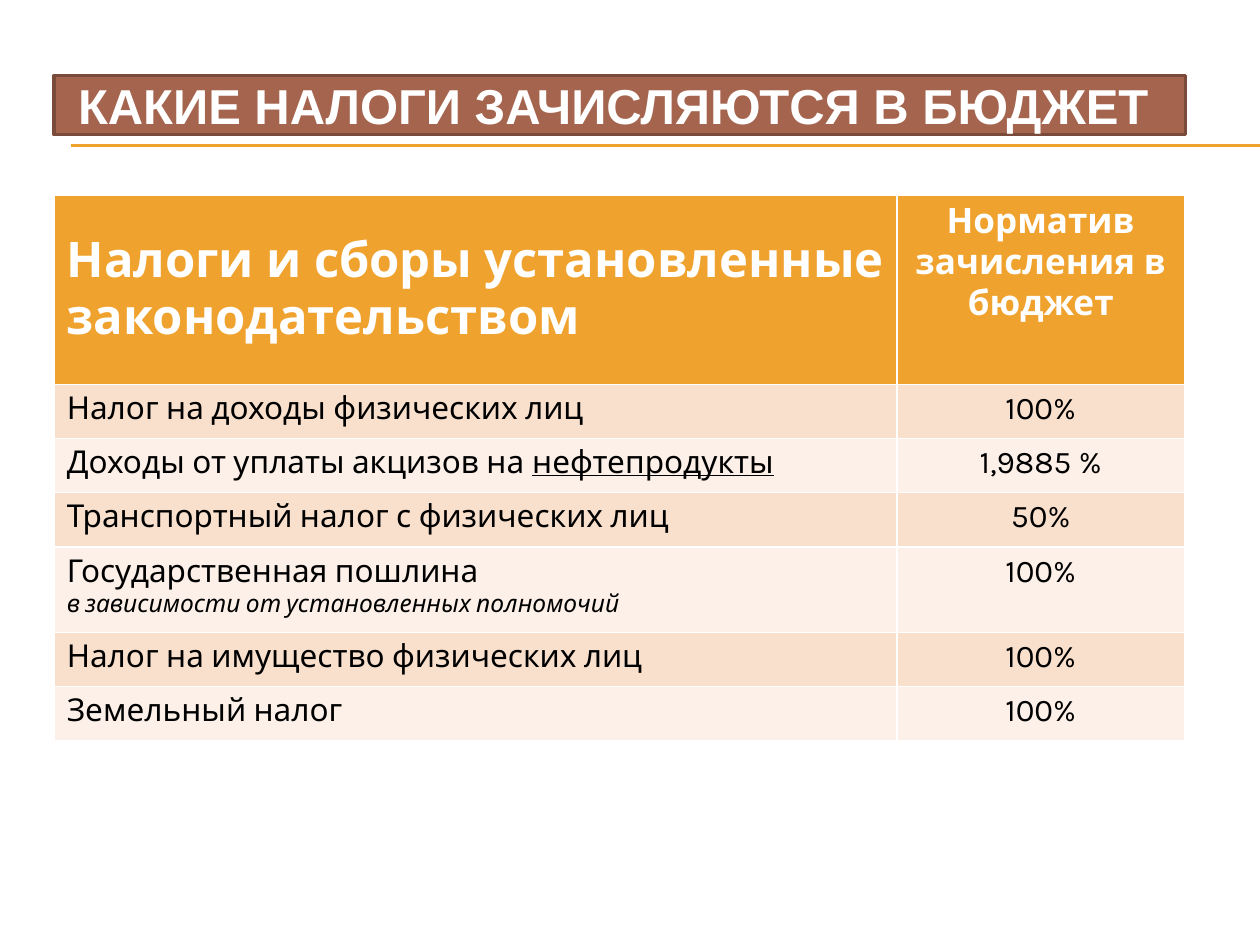
from pptx import Presentation
from pptx.dml.color import RGBColor
from pptx.enum.shapes import MSO_CONNECTOR, MSO_SHAPE
from pptx.enum.text import MSO_ANCHOR, PP_ALIGN
from pptx.oxml.ns import qn
from pptx.util import Inches, Pt
from lxml.etree import SubElement

WHITE = RGBColor(0xFF, 0xFF, 0xFF)
BLACK = RGBColor(0, 0, 0)
GOLD = RGBColor(0xF0, 0xA2, 0x2E)
BROWN = RGBColor(0xA5, 0x64, 0x4E)
DARK = RGBColor(0x7A, 0x4A, 0x3A)
BANDS = [RGBColor(0xFC, 0xF0, 0xE8), RGBColor(0xF9, 0xE0, 0xCD)]

TITLE = "КАКИЕ НАЛОГИ ЗАЧИСЛЯЮТСЯ В БЮДЖЕТ "
HEADS = [("Налоги и сборы установленные законодательством", 28),
         ("Норматив зачисления в бюджет", 20)]
BODY = {"size": Pt(18)}
UNDER = {"size": Pt(18), "underline": True}
NOTE = {"size": Pt(14), "italic": True}
TAXES = [
    ([[("Налог на доходы физических лиц", BODY)]], "100%"),
    ([[("Доходы от уплаты акцизов на ", BODY), ("нефтепродукты", UNDER)]], "1,9885 %"),
    ([[("Транспортный налог с физических лиц", BODY)]], "50%"),
    ([[("Государственная пошлина", BODY)],
      [("в зависимости от установленных полномочий", NOTE)]], "100%"),
    ([[("Налог на имущество физических лиц", BODY)]], "100%"),
    ([[("Земельный налог", BODY)]], "100%"),
]
LEFT, WIDTH = 0.43, 8.98
COLS = [6.69, 2.28]
HEAD, ROW, TALL = 1.5, 0.43, 0.68


def write(frame, lines, base, align):
    for n, line in enumerate(lines):
        para = frame.add_paragraph() if n else frame.paragraphs[0]
        para.alignment = align
        for text, extra in line:
            run = para.add_run()
            run.text = text
            look = {**base, **extra}
            run.font.color.rgb = look.pop("color")
            for key, val in look.items():
                setattr(run.font, key, val)


def paint(cell, fill, lines, base, align):
    cell.fill.solid()
    cell.fill.fore_color.rgb = fill
    write(cell.text_frame, lines, base, align)


deck = Presentation()
deck.slide_width, deck.slide_height = Inches(10), Inches(7.5)
slide = deck.slides.add_slide(deck.slide_layouts[6])
shapes = slide.shapes

for y in (1.15, 1.16):
    rule = shapes.add_connector(MSO_CONNECTOR.STRAIGHT, Inches(0.56), Inches(y),
                                deck.slide_width, Inches(y))
    rule.line.color.rgb = GOLD
    rule.line.width = Pt(0.75)
    SubElement(rule._element.spPr, qn("a:effectLst"))

highs = [HEAD] + [TALL if len(lines) > 1 else ROW for lines, _ in TAXES]
table = shapes.add_table(len(highs), len(COLS), Inches(LEFT), Inches(1.55),
                         Inches(WIDTH), Inches(sum(highs))).table
for col, wide in zip(table.columns, COLS):
    col.width = Inches(wide)
for row, high in zip(table.rows, highs):
    row.height = Inches(high)

sides = [PP_ALIGN.LEFT, PP_ALIGN.CENTER]
top = {"name": "Karla", "bold": True, "color": WHITE}
plain = {"name": "Karla", "bold": False, "color": BLACK}
for c, (text, size) in enumerate(HEADS):
    paint(table.cell(0, c), GOLD, [[(text, {"size": Pt(size)})]], top, sides[c])
table.cell(0, 0).vertical_anchor = MSO_ANCHOR.MIDDLE
for r, (lines, rate) in enumerate(TAXES, 1):
    for c, part in enumerate((lines, [[(rate, BODY)]])):
        paint(table.cell(r, c), BANDS[r % 2], part, plain, sides[c])

title = shapes.add_shape(MSO_SHAPE.RECTANGLE, Inches(LEFT), Inches(0.6),
                         Inches(WIDTH), Inches(0.47))
title.shadow.inherit = False
title.fill.solid()
title.fill.fore_color.rgb = BROWN
title.line.color.rgb = DARK
title.line.width = Pt(2)
frame = title.text_frame
for key, val in {"margin_left": 0, "margin_right": 0, "margin_top": 0,
                 "margin_bottom": 0, "word_wrap": True,
                 "vertical_anchor": MSO_ANCHOR.MIDDLE}.items():
    setattr(frame, key, val)
write(frame, [[(TITLE, {"size": Pt(28)})]],
      {"name": "Arial", "bold": True, "color": WHITE}, PP_ALIGN.CENTER)

deck.save("out.pptx")
